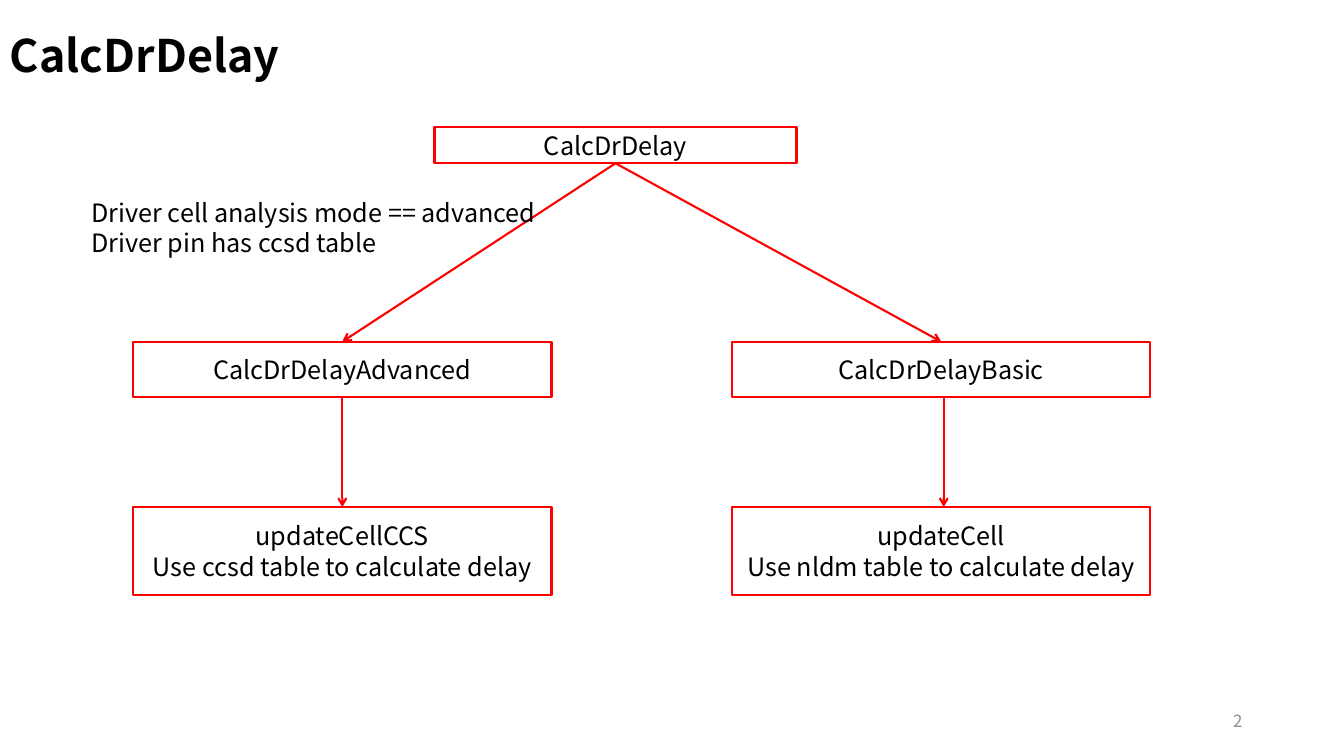
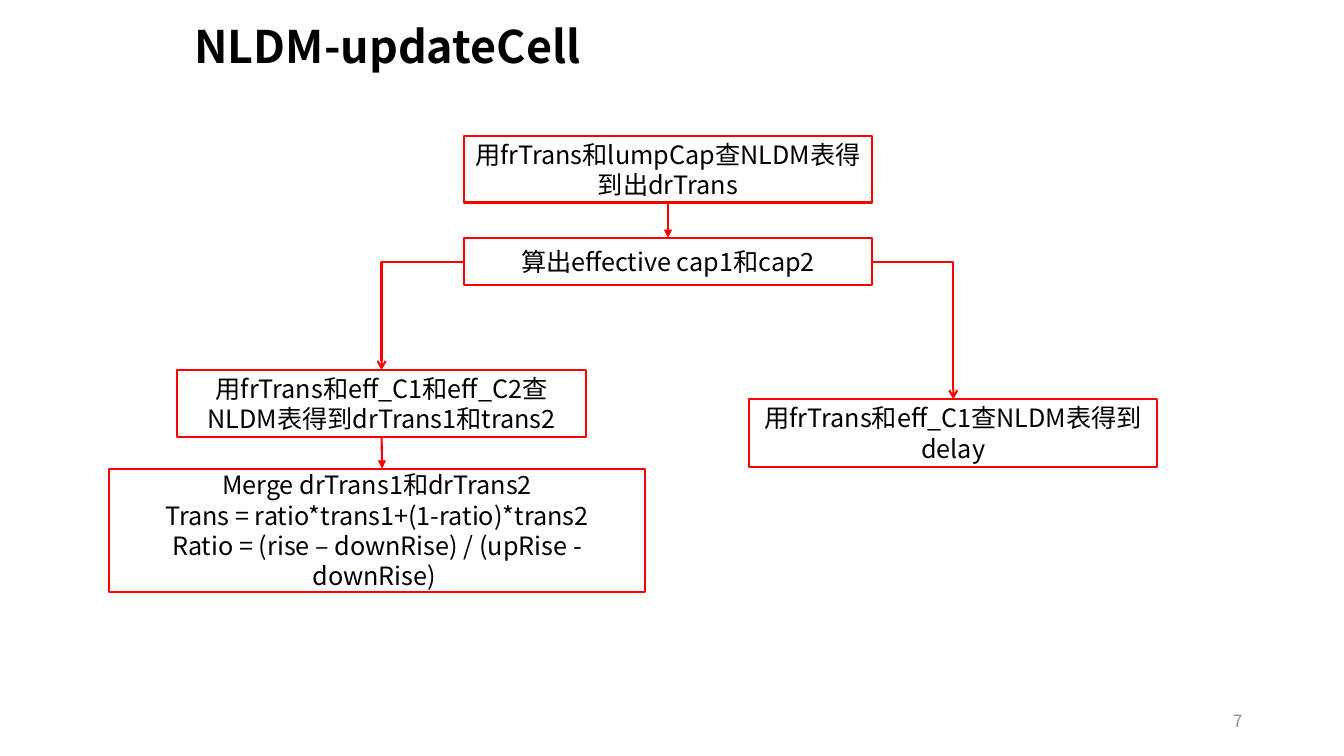
from dataclasses import dataclass
from typing import Optional

import lxml.etree
import pptx
import pptx.dml.color
import pptx.enum.shapes
import pptx.enum.text
import pptx.oxml.ns
import pptx.slide
import pptx.util

Inches = pptx.util.Inches
Align = pptx.enum.text.PP_ALIGN
Anchor = pptx.enum.text.MSO_ANCHOR
RGB = pptx.dml.color.RGBColor
qn = pptx.oxml.ns.qn

TOP, LEFT, BOTTOM, RIGHT = range(4)


@dataclass(frozen=True)
class Theme:
    font: str = "Noto Sans CJK SC"
    ink: RGB = RGB(0, 0, 0)
    muted: RGB = RGB(0x8C, 0x8C, 0x8C)
    paper: RGB = RGB(255, 255, 255)
    accent: RGB = RGB(255, 0, 0)
    title_size: int = 32
    body_size: int = 18
    footer_size: int = 12
    line_width: float = 1.5


THEME = Theme()

# Text styles: values for the frame, the paragraphs and the font
BODY_FONT = {"size": pptx.util.Pt(THEME.body_size), "color": THEME.ink}
TITLE_STYLE = {
    "frame": {"word_wrap": True, "vertical_anchor": Anchor.MIDDLE},
    "paragraph": {"alignment": Align.LEFT, "line_spacing": 0.9},
    "font": {"size": pptx.util.Pt(THEME.title_size), "color": THEME.ink, "bold": True},
}
BOX_STYLE = {
    "frame": {"word_wrap": True, "vertical_anchor": Anchor.MIDDLE},
    "paragraph": {"alignment": Align.CENTER},
    "font": BODY_FONT,
}
NOTE_STYLE = {
    "frame": {
        "word_wrap": False,
        "vertical_anchor": Anchor.TOP,
        "auto_size": pptx.enum.text.MSO_AUTO_SIZE.SHAPE_TO_FIT_TEXT,
    },
    "paragraph": {"alignment": Align.LEFT},
    "font": BODY_FONT,
}
FOOTER_STYLE = {
    "frame": {"word_wrap": True, "vertical_anchor": Anchor.MIDDLE},
    "paragraph": {"alignment": Align.RIGHT},
    "font": {"size": pptx.util.Pt(THEME.footer_size), "color": THEME.muted},
}


@dataclass(frozen=True)
class Box:
    left: float
    top: float
    width: float
    height: float
    lines: tuple[str, ...]

    def side(self, site: int) -> tuple[float, float]:
        """Middle of one side of the box."""
        x = {LEFT: self.left, RIGHT: self.left + self.width}
        y = {TOP: self.top, BOTTOM: self.top + self.height}
        return (x.get(site, self.left + self.width / 2),
                y.get(site, self.top + self.height / 2))


@dataclass(frozen=True)
class Link:
    source: str
    target: str
    exit_side: int = BOTTOM
    head: str = "arrow"
    column: Optional[float] = None  # fixed x of a vertical arrow


@dataclass(frozen=True)
class Page:
    number: int
    title: Box
    boxes: dict[str, Box]
    links: tuple[Link, ...]
    notes: tuple[Box, ...] = ()


def set_values(target: object, values: dict) -> None:
    for name, value in values.items():
        setattr(target, name, value)


def write_lines(shape, lines: tuple[str, ...], style: dict) -> None:
    frame = shape.text_frame
    set_values(frame, style["frame"])
    for index, line in enumerate(lines):
        paragraph = frame.add_paragraph() if index else frame.paragraphs[0]
        set_values(paragraph, style["paragraph"])
        run = paragraph.add_run()
        run.text = line
        for name, value in style["font"].items():
            if name == "color":
                run.font.color.rgb = value
            else:
                setattr(run.font, name, value)
        run.font.name = THEME.font
        # East Asian characters take their own font entry
        properties = run._r.get_or_add_rPr()
        lxml.etree.SubElement(properties, qn("a:ea"), typeface=THEME.font)


def add_text(slide: pptx.slide.Slide, box: Box, style: dict) -> None:
    shape = slide.shapes.add_textbox(
        *map(Inches, (box.left, box.top, box.width, box.height)))
    write_lines(shape, box.lines, style)


def add_box(slide: pptx.slide.Slide, box: Box):
    shape = slide.shapes.add_shape(
        pptx.enum.shapes.MSO_SHAPE.RECTANGLE,
        *map(Inches, (box.left, box.top, box.width, box.height)))
    shape.shadow.inherit = False
    shape.fill.solid()
    shape.fill.fore_color.rgb = THEME.paper
    shape.line.color.rgb = THEME.accent
    shape.line.width = pptx.util.Pt(THEME.line_width)
    write_lines(shape, box.lines, BOX_STYLE)
    return shape


def add_link(slide: pptx.slide.Slide, link: Link, boxes: dict[str, Box],
             shapes: dict) -> None:
    elbow = link.exit_side in (LEFT, RIGHT)
    kinds = pptx.enum.shapes.MSO_CONNECTOR
    begin = boxes[link.source].side(link.exit_side)
    end = boxes[link.target].side(TOP)
    start_x, end_x = begin[0], end[0]
    if link.column is not None:
        start_x = end_x = link.column
    connector = slide.shapes.add_connector(
        kinds.ELBOW if elbow else kinds.STRAIGHT,
        *map(Inches, (start_x, begin[1], end_x, end[1])))
    # Join only the ends that meet the middle of a side
    if abs(start_x - begin[0]) < 0.01:
        connector.begin_connect(shapes[link.source], link.exit_side)
    if abs(end_x - end[0]) < 0.01:
        connector.end_connect(shapes[link.target], TOP)
    connector.line.color.rgb = THEME.accent
    connector.line.width = pptx.util.Pt(THEME.line_width)
    properties = connector._element.spPr
    if elbow:  # a single corner
        properties.find(qn("a:prstGeom")).set("prst", "bentConnector2")
    lxml.etree.SubElement(properties.find(qn("a:ln")), qn("a:tailEnd"), type=link.head)
    lxml.etree.SubElement(properties, qn("a:effectLst"))


def add_page(presentation, page: Page) -> None:
    slide = presentation.slides.add_slide(presentation.slide_layouts[6])
    add_text(slide, Box(9.42, 6.95, 3, 0.4, (str(page.number),)), FOOTER_STYLE)
    add_text(slide, page.title, TITLE_STYLE)
    shapes = {name: add_box(slide, box) for name, box in page.boxes.items()}
    for link in page.links:
        add_link(slide, link, page.boxes, shapes)
    for note in page.notes:
        add_text(slide, note, NOTE_STYLE)


# Call tree: two columns of equal boxes
BRANCH_WIDTH = 4.15
ADVANCED_LEFT, BASIC_LEFT = 1.32, 7.26
CALL_TOP, CALL_HEIGHT = 3.39, 0.55
UPDATE_TOP, UPDATE_HEIGHT = 5.03, 0.87

# Flow: four steps share one width
STEP_WIDTH, CENTRE_LEFT = 4.05, 4.6

PAGES = (
    Page(
        number=2,
        title=Box(0, -0.15, 11.5, 1.45, ("CalcDrDelay",)),
        boxes={
            "root": Box(4.31, 1.26, 3.59, 0.36, ("CalcDrDelay",)),
            "advanced": Box(ADVANCED_LEFT, CALL_TOP, BRANCH_WIDTH, CALL_HEIGHT,
                            ("CalcDrDelayAdvanced",)),
            "basic": Box(BASIC_LEFT, CALL_TOP, BRANCH_WIDTH, CALL_HEIGHT,
                         ("CalcDrDelayBasic",)),
            "ccs": Box(ADVANCED_LEFT, UPDATE_TOP, BRANCH_WIDTH, UPDATE_HEIGHT,
                       ("updateCellCCS", "Use ccsd table to calculate delay")),
            "nldm": Box(BASIC_LEFT, UPDATE_TOP, BRANCH_WIDTH, UPDATE_HEIGHT,
                        ("updateCell", "Use nldm table to calculate delay")),
        },
        links=(
            Link("root", "advanced"),
            Link("root", "basic"),
            Link("advanced", "ccs"),
            Link("basic", "nldm", column=9.36),
        ),
        notes=(Box(0.81, 1.91, 4.83, 0.71,
                   ("Driver cell analysis mode == advanced",
                    "Driver pin has ccsd table")),),
    ),
    Page(
        number=7,
        title=Box(1.83, -0.24, 11.5, 1.45, ("NLDM-updateCell",)),
        boxes={
            "lookup": Box(CENTRE_LEFT, 1.35, STEP_WIDTH, 0.66,
                          ("用frTrans和lumpCap查NLDM表得到出drTrans",)),
            "caps": Box(CENTRE_LEFT, 2.36, STEP_WIDTH, 0.47,
                        ("算出effective cap1和cap2",)),
            "trans": Box(1.76, 3.67, STEP_WIDTH, 0.67,
                         ("用frTrans和eff_C1和eff_C2查NLDM表得到drTrans1和trans2",)),
            "merge": Box(1.08, 4.65, 5.32, 1.22,
                         ("Merge drTrans1和drTrans2",
                          "Trans = ratio*trans1+(1-ratio)*trans2",
                          "Ratio = (rise – downRise) / (upRise - downRise) ")),
            "delay": Box(7.43, 3.96, STEP_WIDTH, 0.67,
                         ("用frTrans和eff_C1查NLDM表得到delay",)),
        },
        links=(
            Link("lookup", "caps", head="triangle"),
            Link("trans", "merge", head="triangle", column=3.79),
            Link("caps", "delay", exit_side=RIGHT),
            Link("caps", "trans", exit_side=LEFT),
        ),
    ),
)


def main() -> None:
    presentation = pptx.Presentation()
    presentation.slide_width = Inches(13.33)
    presentation.slide_height = Inches(7.5)
    for page in PAGES:
        add_page(presentation, page)
    presentation.save("out.pptx")


if __name__ == "__main__":
    main()
